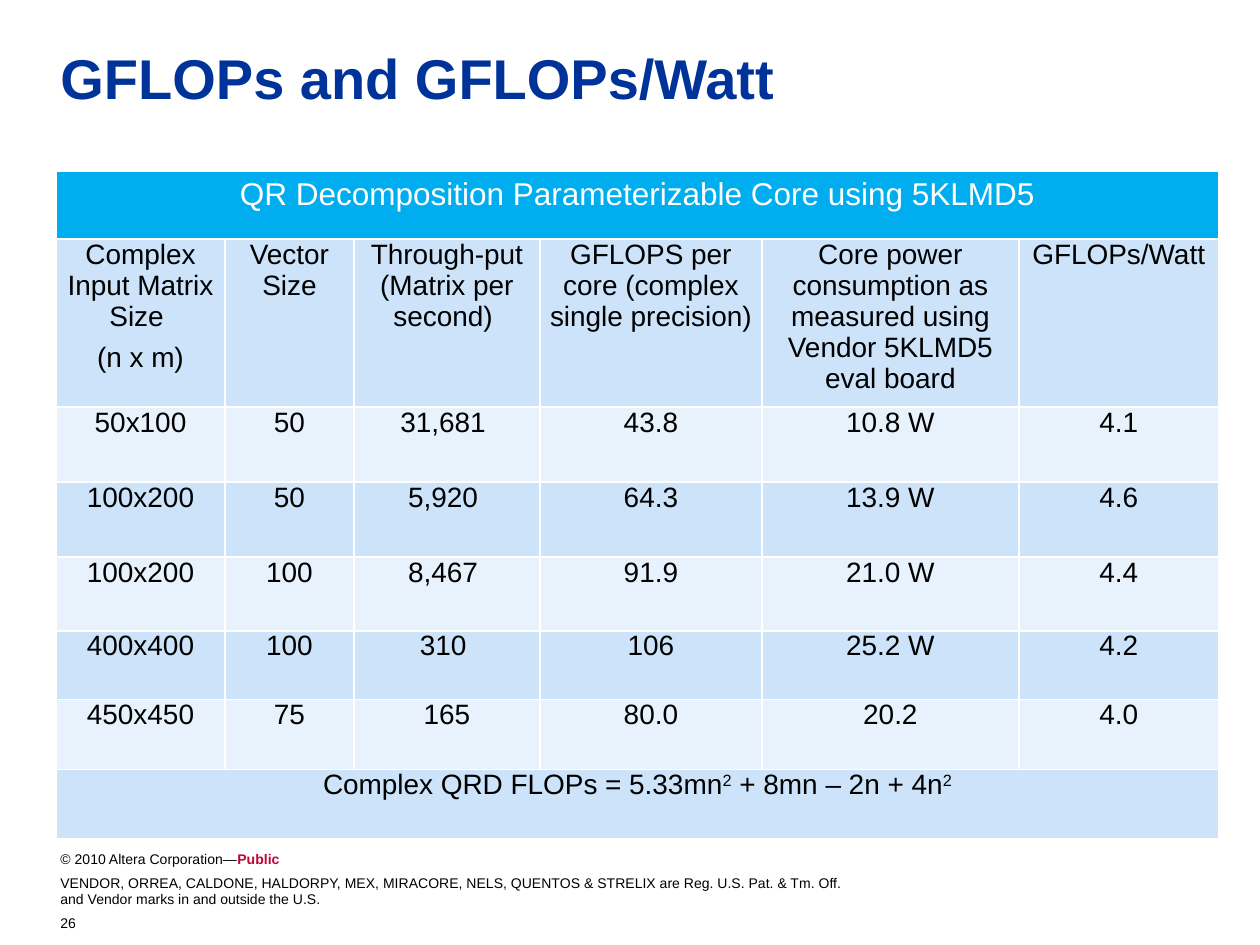
from lxml.etree import SubElement
from pptx import Presentation
from pptx.dml.color import RGBColor
from pptx.enum.text import MSO_ANCHOR, PP_ALIGN
from pptx.oxml.ns import qn
from pptx.util import Emu, Pt

SCALE = 914400 / 126
COLORS = {
    "white": "FFFFFF", "black": "000000", "navy": "003399", "red": "C10435",
    "cyan": "00AEEF", "blue": "CCE3F9", "pale": "E7F2FC",
}


def px(value):
    return Emu(round(value * SCALE))


def add_run(paragraph, text, size, color, bold=False, baseline=None):
    run = paragraph.add_run()
    run.text = text
    formats = {"name": "Arial", "size": Pt(size), "bold": bold}
    for name, value in formats.items():
        setattr(run.font, name, value)
    run.font.color.rgb = RGBColor.from_string(COLORS[color])
    if baseline:
        run.font._element.set("baseline", str(baseline))


presentation = Presentation()
presentation.slide_width = px(1260)
presentation.slide_height = px(945)
slide = presentation.slides.add_slide(presentation.slide_layouts[6])

text_boxes = [
    (844, 586, 53, [[("© 2010 Altera Corporation—", 8, "black"), ("Public", 8, "red", True)]]),
    (868, 905, 47, [
        [("VENDOR, ORREA, CALDONE, HALDORPY, MEX, MIRACORE, NELS, QUENTOS & STRELIX are Reg. U.S. Pat. & Tm. Off. ", 8, "black")],
        [("and Vendor marks in and outside the U.S.", 8, "black")],
    ]),
    (37, 1148, 126, [[("GFLOPs and GFLOPs/Watt", 32, "navy", True)]]),
    (908, 96, 37, [[("26", 8, "black")]]),
]
for top, width, height, lines in text_boxes:
    shape = slide.shapes.add_textbox(px(48), px(top), px(width), px(height))
    shape.text_frame.word_wrap = True
    shape.text_frame.vertical_anchor = MSO_ANCHOR.TOP
    paragraph = shape.text_frame.paragraphs[0]
    for index, line in enumerate(lines):
        if index:
            paragraph.add_line_break()
        for run_values in line:
            add_run(paragraph, *run_values)

column_widths = [169, 129, 186, 222, 257, 200]
row_heights = [68, 155, 75, 75, 74, 69, 70, 69]
rows = [
    ["QR Decomposition Parameterizable Core using 5KLMD5"],
    ["Complex Input Matrix Size \n(n x m)", "Vector Size", "Through-put (Matrix per second) ",
     "GFLOPS per core (complex single precision)",
     "Core power consumption as measured using Vendor 5KLMD5 eval board", "GFLOPs/Watt"],
    ["50x100", "50", "31,681 ", "43.8", "10.8 W", "4.1"],
    ["100x200", "50", "5,920 ", "64.3", "13.9 W", "4.6"],
    ["100x200", "100", "8,467 ", "91.9", "21.0 W", "4.4"],
    ["400x400", "100", "310 ", "106", "25.2 W", "4.2"],
    ["450x450", "75", "165", "80.0", "20.2", "4.0"],
    [],
]
table = slide.shapes.add_table(
    len(rows), len(column_widths), px(56), px(171), px(sum(column_widths)), px(sum(row_heights))
).table
table.first_row = False
table.horz_banding = False
for column, width in zip(table.columns, column_widths):
    column.width = px(width)
for row, height in zip(table.rows, row_heights):
    row.height = px(height)
last_row = len(rows) - 1
for merged_row in (0, last_row):
    table.cell(merged_row, 0).merge(table.cell(merged_row, len(column_widths) - 1))

for row_index, row in enumerate(table.rows):
    is_heading = row_index == 0
    fill_color = "cyan" if is_heading else "blue" if row_index % 2 else "pale"
    for cell in row.cells:
        properties = cell._tc.get_or_add_tcPr()
        for side in ("lnL", "lnR", "lnT", "lnB"):
            border = SubElement(properties, qn(f"a:{side}"), w=str(Pt(1)))
            SubElement(SubElement(border, qn("a:solidFill")), qn("a:srgbClr"), val=COLORS["white"])
        cell.fill.solid()
        cell.fill.fore_color.rgb = RGBColor.from_string(COLORS[fill_color])
        if not is_heading:
            margins = {"margin_left": px(9), "margin_right": px(9), "margin_top": 0, "margin_bottom": 0}
            for name, value in margins.items():
                setattr(cell, name, value)
    for column_index, text in enumerate(rows[row_index]):
        text_frame = table.cell(row_index, column_index).text_frame
        lines = text.split("\n")
        for line_index, line in enumerate(lines):
            paragraph = text_frame.add_paragraph() if line_index else text_frame.paragraphs[0]
            paragraph.alignment = PP_ALIGN.CENTER
            paragraph.space_after = Pt(6 if line_index < len(lines) - 1 else 0)
            add_run(paragraph, line, 18 if is_heading else 16, "white" if is_heading else "black")

formula = table.cell(last_row, 0).text_frame.paragraphs[0]
formula.alignment = PP_ALIGN.CENTER
for text, baseline in [("Complex QRD FLOPs = 5.33mn", None), ("2", 30000), (" + 8mn – 2n + 4n", None), ("2", 30000)]:
    add_run(formula, text, 16, "black", baseline=baseline)

presentation.save("out.pptx")
